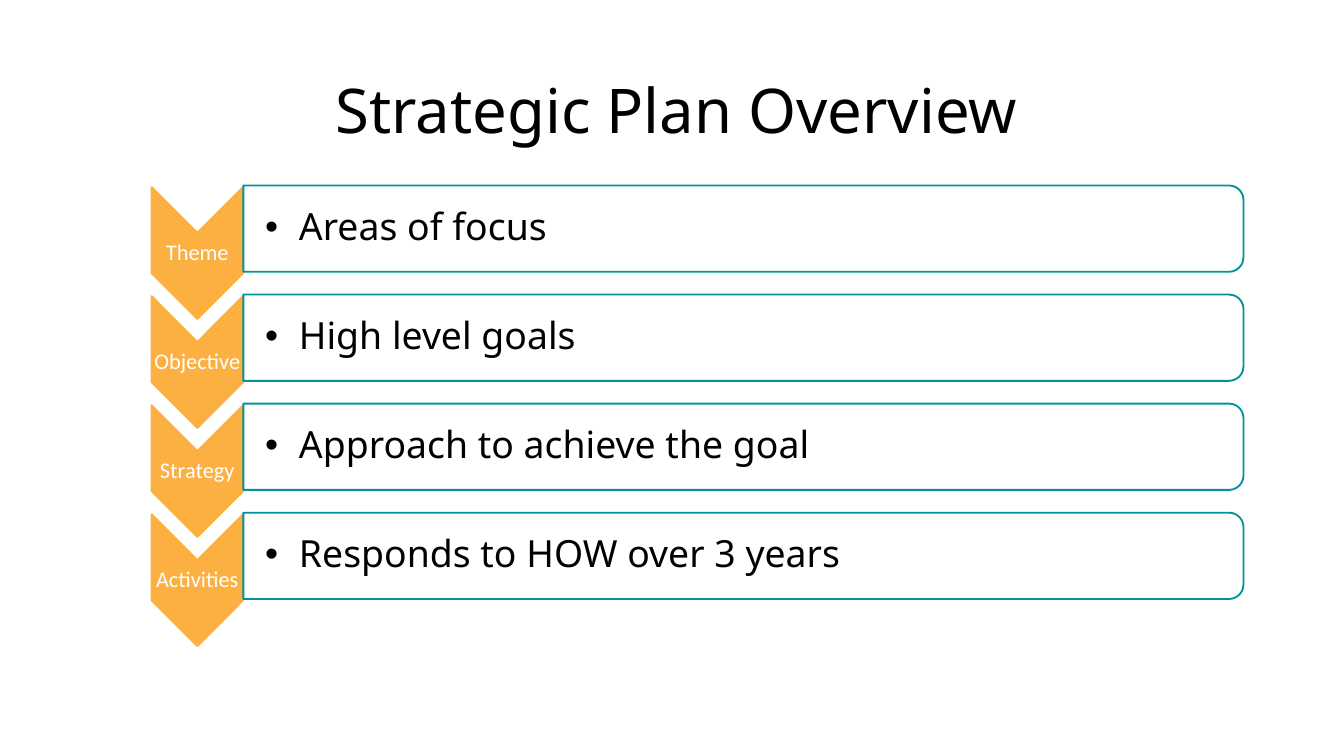
"""Build the Strategic Plan Overview slide."""
from lxml.etree import SubElement
from pptx import Presentation
from pptx.dml.color import RGBColor
from pptx.enum.shapes import MSO_SHAPE
from pptx.enum.text import MSO_ANCHOR, MSO_AUTO_SIZE, PP_ALIGN
from pptx.oxml.ns import qn
from pptx.util import Cm, Pt

TITLE = "Strategic Plan Overview"
LEVELS = [
    ("Theme", "Areas of focus"),
    ("Objective", "High level goals"),
    ("Strategy", "Approach to achieve the goal"),
    ("Activities", "Responds to HOW over 3 years"),
]
ORANGE, TEAL, WHITE, BLACK = "FCB042", "00949A", "FFFFFF", "000000"
ROW_STEP = 2.06
CHEVRON_X, CHEVRON_Y, CHEVRON_LENGTH, CHEVRON_WIDTH = 3.73, 4.78, 2.49, 1.73
BAR_X, BAR_Y, BAR_LENGTH, BAR_WIDTH = 14.05, 4.32, 18.9, 1.63
INSET = 0.03


def color(value):
    return RGBColor.from_string(value)


def write(box, text, *, size, font, ink, align=PP_ALIGN.LEFT, bullet=False):
    frame = box.text_frame
    frame.word_wrap = True
    frame.auto_size = MSO_AUTO_SIZE.NONE
    frame.vertical_anchor = MSO_ANCHOR.MIDDLE
    para = frame.paragraphs[0]
    para.alignment = align
    para.line_spacing = 0.9
    para.space_before = Pt(0)
    if bullet:
        para.level = 1
        properties = para._p.get_or_add_pPr()
        properties.set("marL", str(Cm(0.64)))
        properties.set("indent", str(-Cm(0.64)))
        SubElement(properties, qn("a:buFont"), typeface="Arial")
        SubElement(properties, qn("a:buChar"), char="•")
    span = para.add_run()
    span.text = text
    span.font.size = Pt(size)
    span.font.name = font
    span.font.color.rgb = color(ink)


def add_text(page, text, left, top, width, height, *, inset=INSET, **style):
    box = page.shapes.add_textbox(Cm(left), Cm(top), Cm(width), Cm(height))
    frame = box.text_frame
    frame.margin_left = Cm(inset)
    frame.margin_right = frame.margin_top = frame.margin_bottom = Cm(INSET)
    write(box, text, **style)


def add_turned(page, kind, center_x, center_y, length, width, *, fill, line):
    """Add a shape turned clockwise by 90 degrees around its centre."""
    shape = page.shapes.add_shape(
        kind, Cm(center_x - width / 2), Cm(center_y - length / 2), Cm(width), Cm(length))
    shape.rotation = 90
    shape.shadow.inherit = False
    shape.fill.solid()
    shape.fill.fore_color.rgb = color(fill)
    shape.line.color.rgb = color(line)
    shape.line.width = Pt(1)
    return shape


def add_level(page, index, label, meaning):
    chevron_y = CHEVRON_Y + index * ROW_STEP
    bar_y = BAR_Y + index * ROW_STEP
    add_turned(page, MSO_SHAPE.CHEVRON, CHEVRON_X, chevron_y, CHEVRON_WIDTH,
               CHEVRON_LENGTH, fill=ORANGE, line=ORANGE)
    add_text(page, label, CHEVRON_X - CHEVRON_WIDTH / 2, chevron_y - 0.37,
             CHEVRON_WIDTH, 0.74, size=12, font="Calibri", ink=WHITE,
             align=PP_ALIGN.CENTER)
    bar = add_turned(page, MSO_SHAPE.ROUND_2_SAME_RECTANGLE, BAR_X, bar_y,
                     BAR_LENGTH, BAR_WIDTH, fill=WHITE, line=TEAL)
    fill = bar._element.spPr.find(qn("a:solidFill"))
    SubElement(fill[0], qn("a:alpha"), val="90000")
    add_text(page, meaning, BAR_X - BAR_LENGTH / 2, bar_y - 0.72, 18.82, 1.44,
             inset=0.41, size=20, font="Noto Sans", ink=BLACK, bullet=True)


def main():
    deck = Presentation()
    deck.slide_width, deck.slide_height = Cm(25.4), Cm(14.28)
    page = deck.slides.add_slide(deck.slide_layouts[5])
    title = page.shapes.title
    title.left, title.top, title.width, title.height = Cm(2.46), Cm(0.76), Cm(20.65), Cm(2.77)
    write(title, TITLE, size=33, font="Noto Sans", ink=BLACK, align=PP_ALIGN.CENTER)
    for index, (label, meaning) in enumerate(LEVELS):
        add_level(page, index, label, meaning)
    deck.save("out.pptx")


if __name__ == "__main__":
    main()
